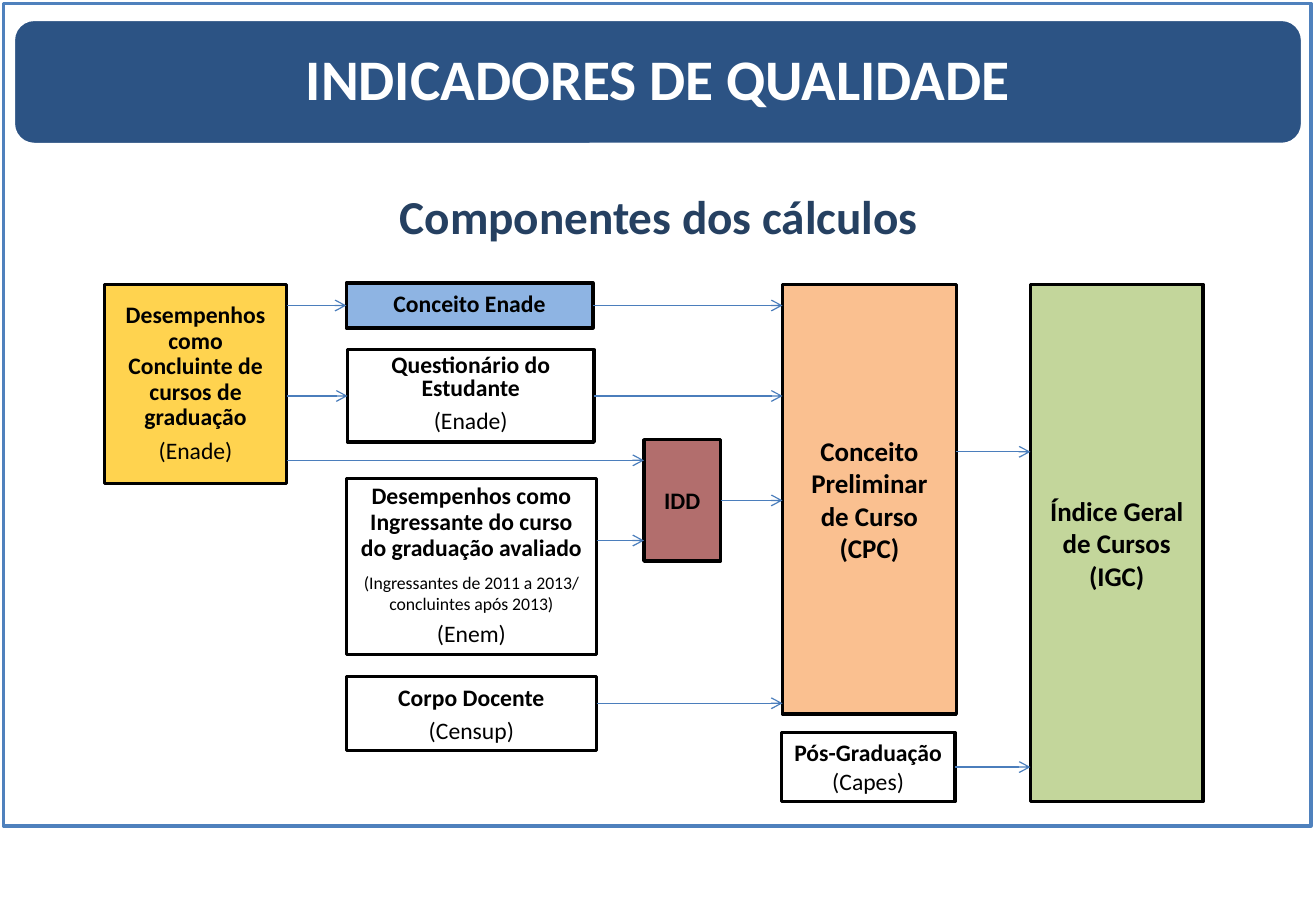
from dataclasses import dataclass

from lxml.etree import SubElement
from pptx import Presentation
from pptx.dml.color import RGBColor
from pptx.enum.shapes import MSO_CONNECTOR as Connector, MSO_SHAPE as Shape
from pptx.enum.text import MSO_ANCHOR as Anchor, PP_ALIGN as Align
from pptx.oxml.ns import qn
from pptx.util import Inches, Pt


@dataclass(frozen=True)
class Theme:
    font: str = "Calibri"
    title: float = 34
    subtitle: float = 28
    index: float = 16
    body: float = 14
    note: float = 10.5
    border: float = 2
    arrow: float = 0.75
    white: str = "FFFFFF"
    black: str = "000000"
    frame: str = "4F81BD"
    banner: str = "1F497D"
    heading: str = "254061"
    link: str = "4B7EBC"
    yellow: str = "FFC000"
    blue: str = "8EB4E3"
    orange: str = "FAC090"
    green: str = "C3D69B"
    red: str = "953735"


@dataclass(frozen=True)
class Line:
    text: str
    size: float = Theme.body
    bold: bool = True
    spacing: float = 1
    before: float = 0
    color: str = Theme.black


def source_line(text, before=3):
    return Line(text, bold=False, before=before)


class Diagram:
    CELLS_PER_INCH = 10

    def __init__(self, columns, rows):
        self.theme = Theme()
        self.deck = Presentation()
        self.deck.slide_width = self.cells(columns)
        self.deck.slide_height = self.cells(rows)
        self.slide = self.deck.slides.add_slide(self.deck.slide_layouts[6])

    def cells(self, count):
        return Inches(count / self.CELLS_PER_INCH)

    def set_lines(self, holder, lines, anchor):
        frame = holder.text_frame
        frame.word_wrap = True
        frame.vertical_anchor = anchor
        frame.text = "\n".join(line.text for line in lines)
        for paragraph, line in zip(frame.paragraphs, lines):
            paragraph.alignment = Align.CENTER
            paragraph.line_spacing = line.spacing
            paragraph.space_before = Pt(line.before)
            for run in paragraph.runs:
                run.font.name = self.theme.font
                run.font.size = Pt(line.size)
                run.font.bold = line.bold
                run.font.color.rgb = RGBColor.from_string(line.color)

    def box(self, place, fill, lines=(), anchor=Anchor.TOP, border=Theme.black,
            opacity=100, outline=Shape.RECTANGLE):
        shape = self.slide.shapes.add_shape(outline, *map(self.cells, place))
        shape.shadow.inherit = False
        shape.fill.solid()
        shape.fill.fore_color.rgb = RGBColor.from_string(fill)
        if opacity < 100:
            color = shape._element.spPr.find(qn("a:solidFill"))[0]
            SubElement(color, qn("a:alpha")).set("val", str(opacity * 1000))
        shape.line.color.rgb = RGBColor.from_string(border)
        shape.line.width = Pt(self.theme.border)
        if lines:
            self.set_lines(shape, lines, anchor)
        return shape

    def label(self, place, line):
        holder = self.slide.shapes.add_textbox(*map(self.cells, place))
        self.set_lines(holder, [line], Anchor.TOP)

    def arrow(self, source, target, row=None, level_with=None):
        if level_with is None:
            y = self.cells(row)
        else:
            y = level_with.top + level_with.height // 2
        link = self.slide.shapes.add_connector(
            Connector.STRAIGHT, source.left + source.width, y, target.left, y)
        if level_with is source:
            link.begin_connect(source, 3)
        elif level_with is target:
            link.end_connect(target, 1)
        link.line.color.rgb = RGBColor.from_string(self.theme.link)
        link.line.width = Pt(self.theme.arrow)
        properties = link._element.spPr
        SubElement(properties.find(qn("a:ln")), qn("a:tailEnd")).set("type", "arrow")
        SubElement(properties, qn("a:effectLst"))


def main():
    diagram = Diagram(108.3, 75)
    theme = diagram.theme

    diagram.box((0.3, 0.3, 107.6, 67.7), theme.white, border=theme.frame, opacity=90)
    diagram.box((1.1, 1.6, 106.1, 10.3), theme.banner,
                [Line("INDICADORES DE QUALIDADE", theme.title, spacing=0.9, color=theme.white)],
                Anchor.MIDDLE, theme.white, 94, Shape.ROUNDED_RECTANGLE)
    diagram.label((3.8, 14.5, 100.8, 6.2),
                  Line("Componentes dos cálculos", theme.subtitle, spacing=1.1,
                       color=theme.heading))

    concluinte = diagram.box(
        (8.6, 23.4, 15, 16.4), theme.yellow,
        [Line("Desempenhos como Concluinte de cursos de graduação", spacing=0.9),
         source_line("(Enade)")], Anchor.MIDDLE, opacity=69)
    conceito = diagram.box((28.5, 23.3, 20.3, 3.7), theme.blue, [Line("Conceito Enade")])
    questionario = diagram.box(
        (28.6, 28.8, 20.3, 7.6), theme.white,
        [Line("Questionário do Estudante", spacing=0.8), source_line("(Enade)")])
    ingressante = diagram.box(
        (28.5, 39.4, 20.6, 14.5), theme.white,
        [Line("Desempenhos como Ingressante do curso do graduação avaliado", spacing=0.9),
         Line("(Ingressantes de 2011 a 2013/ concluintes após 2013)", theme.note,
              bold=False, before=6),
         source_line("(Enem)")])
    docente = diagram.box((28.5, 55.7, 20.6, 6.1), theme.white,
                          [Line("Corpo Docente"), source_line("(Censup)")])
    idd = diagram.box((53, 36.2, 6.3, 10), theme.red, [Line("IDD")],
                      Anchor.MIDDLE, opacity=72)
    cpc = diagram.box((64.4, 23.4, 14.3, 35.4), theme.orange,
                      [Line("Conceito Preliminar de Curso (CPC)", theme.index)],
                      Anchor.MIDDLE)
    pos_graduacao = diagram.box((64.3, 60.3, 14.3, 5.7), theme.white,
                                [Line("Pós-Graduação"), source_line("(Capes)", before=0)])
    igc = diagram.box((84.8, 23.4, 14.2, 42.6), theme.green,
                      [Line("Índice Geral de Cursos (IGC)", theme.index)], Anchor.MIDDLE)

    for source, target, level in (
        (concluinte, conceito, conceito),
        (concluinte, questionario, questionario),
        (conceito, cpc, conceito),
        (questionario, cpc, questionario),
        (idd, cpc, idd),
        (pos_graduacao, igc, pos_graduacao),
    ):
        diagram.arrow(source, target, level_with=level)
    for source, target, row in (
        (concluinte, idd, 37.9),
        (ingressante, idd, 44.5),
        (docente, cpc, 57.9),
        (cpc, igc, 37.2),
    ):
        diagram.arrow(source, target, row)

    diagram.deck.save("out.pptx")


if __name__ == "__main__":
    main()
